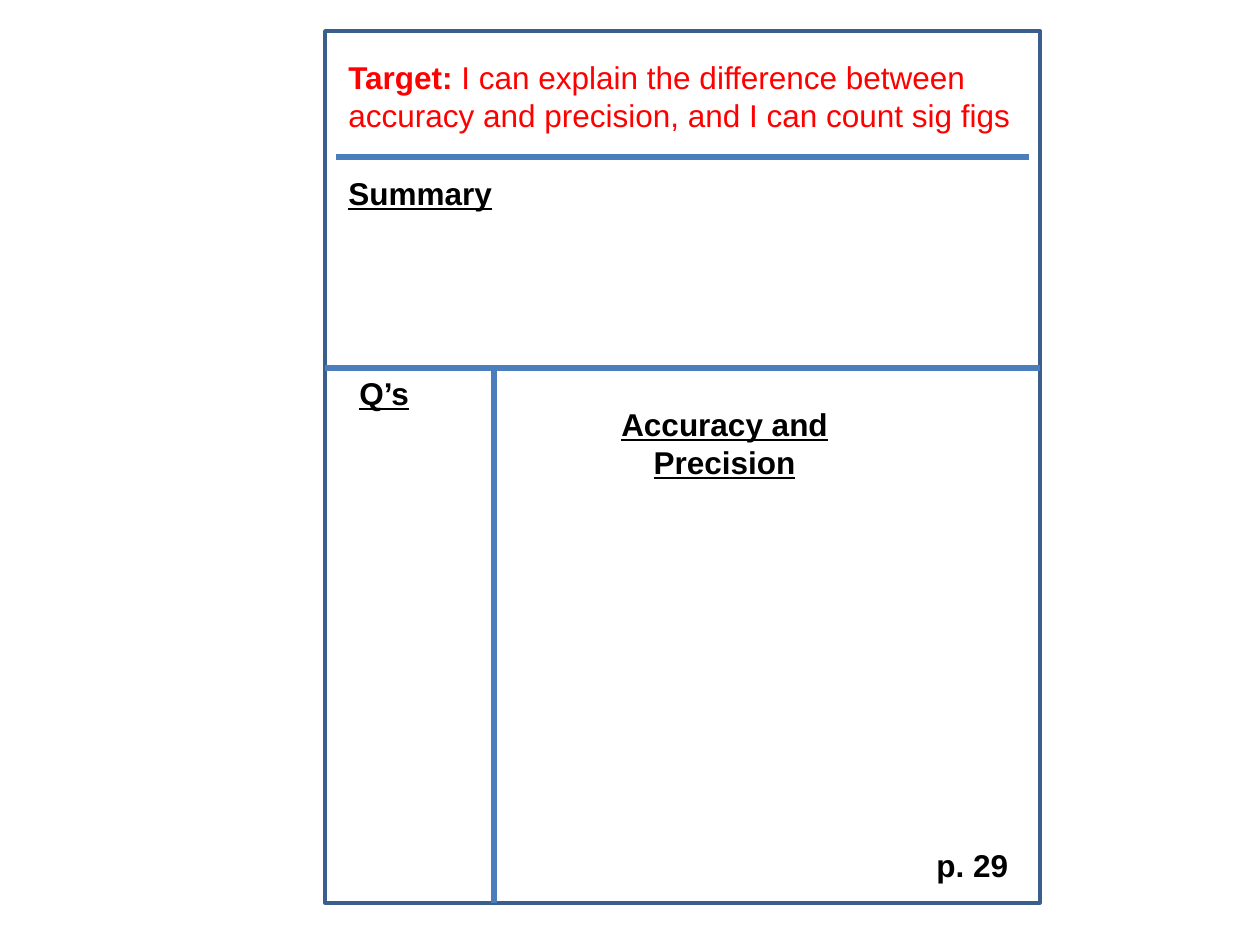
from pptx import Presentation
from pptx.dml.color import RGBColor
from pptx.enum.shapes import MSO_CONNECTOR, MSO_SHAPE
from pptx.enum.text import MSO_AUTO_SIZE, PP_ALIGN
from pptx.oxml.ns import qn
from pptx.util import Emu, Pt
from lxml.etree import SubElement

PX_PER_INCH = 126


def px(length):
    return Emu(round(length * 914400 / PX_PER_INCH))


def color(value):
    return RGBColor.from_string(value)


class NotebookPage:
    FONT, SIZE = "Arial", 18
    BLACK, RED, WHITE = "000000", "FF0000", "FFFFFF"
    BORDER, RULE = "3A5F8C", "4B7EBC"

    def __init__(self, slide):
        self.slide = slide

    def frame(self, left, top, width, height):
        shape = self.slide.shapes.add_shape(
            MSO_SHAPE.RECTANGLE, px(left), px(top), px(width), px(height))
        shape.shadow.inherit = False
        shape.fill.solid()
        shape.fill.fore_color.rgb = color(self.WHITE)
        shape.line.color.rgb = color(self.BORDER)
        shape.line.width = Pt(2)

    def rule(self, x1, y1, x2, y2):
        connector = self.slide.shapes.add_connector(
            MSO_CONNECTOR.STRAIGHT, px(x1), px(y1), px(x2), px(y2))
        connector.line.color.rgb = color(self.RULE)
        connector.line.width = Pt(3)
        SubElement(connector._element.spPr, qn("a:effectLst"))

    def text(self, left, top, width, height, runs, text_color=BLACK,
             underline=False, align=PP_ALIGN.LEFT):
        """Add one paragraph; runs is a list of (wording, bold) pairs."""
        box = self.slide.shapes.add_textbox(
            px(left), px(top), px(width), px(height))
        frame = box.text_frame
        frame.word_wrap = True
        frame.auto_size = MSO_AUTO_SIZE.SHAPE_TO_FIT_TEXT
        paragraph = frame.paragraphs[0]
        paragraph.alignment = align
        for wording, bold in runs:
            run = paragraph.add_run()
            run.text = wording
            run.font.name = self.FONT
            run.font.size = Pt(self.SIZE)
            run.font.bold = bold
            run.font.underline = underline
            run.font.color.rgb = color(text_color)


def main():
    presentation = Presentation()
    presentation.slide_width, presentation.slide_height = px(1260), px(945)
    slide = presentation.slides.add_slide(presentation.slide_layouts[6])
    page = NotebookPage(slide)

    # Page outline and the rules that divide it
    left, top, width, height = 325, 31, 715, 872
    right, bottom = left + width, top + height
    target_y, notes_y, notes_x = 157, 368, 494
    page.frame(left, top, width, height)
    page.rule(left + 11, target_y, right - 11, target_y)
    page.rule(notes_x, notes_y, notes_x, bottom)
    page.rule(left, notes_y, right, notes_y)

    # Learning target
    page.text(336, 52, 766, 89, [
        ("Target:", True),
        (" I can explain the difference between accuracy and precision, "
         "and I can count sig figs", False),
    ], text_color=page.RED)

    # Section headings
    page.text(347, notes_y, 116, 50, [("Q’s", True)], underline=True)
    page.text(336, 168, 210, 50, [("Summary", True)], underline=True)
    page.text(546, 399, 357, 89, [("Accuracy and Precision", True)],
              underline=True, align=PP_ALIGN.CENTER)

    # Page number
    page.text(924, 840, 105, 50, [("p. 29", True)])

    presentation.save("out.pptx")


if __name__ == "__main__":
    main()
